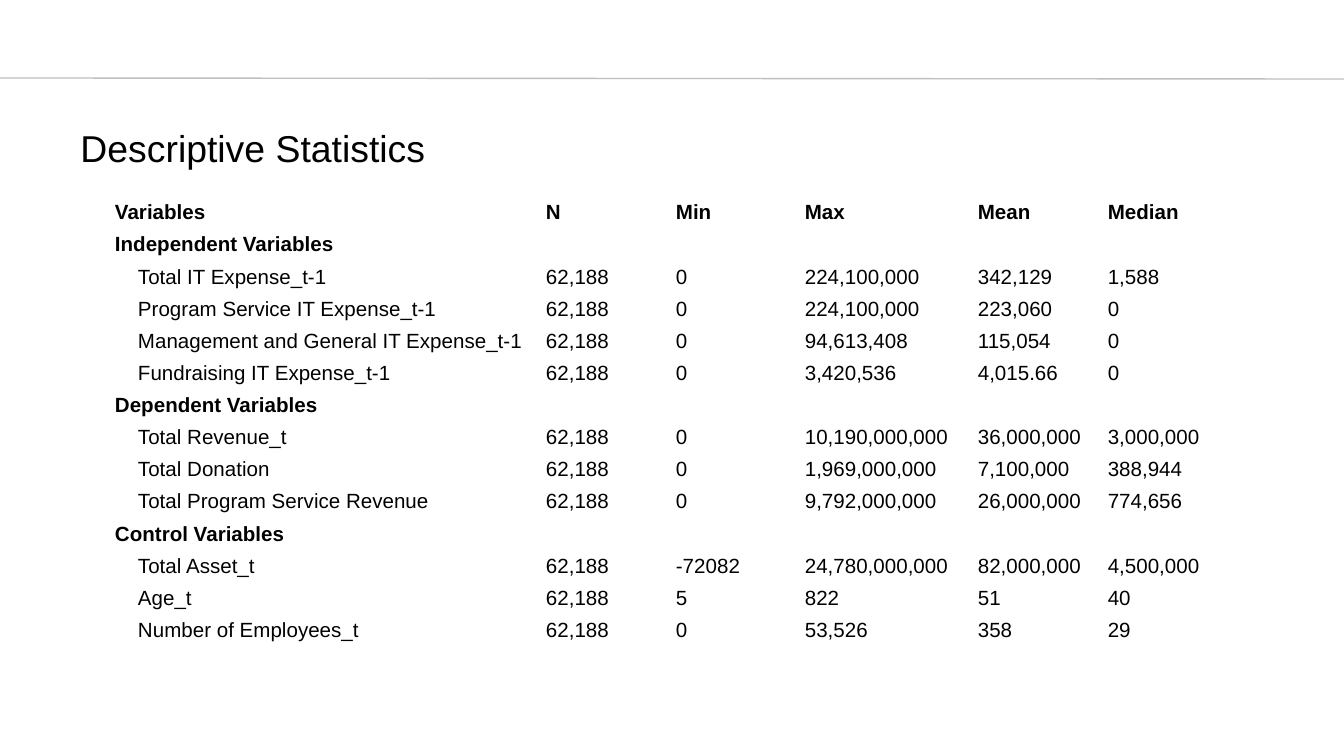
"""Build the descriptive statistics slide."""
import dataclasses

import lxml.etree
import pptx
import pptx.dml.color
import pptx.enum.shapes
import pptx.enum.text
import pptx.oxml.ns
import pptx.util

SCALE = 914400 / 134.4
FONT = "Arial"
BLACK = "000000"
COLS = (431, 130, 129, 173, 130, 129)


@dataclasses.dataclass(frozen=True)
class Row:
    label: str
    vals: tuple[str, ...] = ("",) * 5
    head: bool = False


def case(label: str, low: str, high: str, mean: str, mid: str) -> Row:
    return Row(label, ("62,188", low, high, mean, mid))


ROWS = (
    Row("Variables", ("N", "Min", "Max", "Mean", "Median"), True),
    Row("Independent Variables", head=True),
    case("Total IT Expense_t-1", "0", "224,100,000", "342,129", "1,588"),
    case("Program Service IT Expense_t-1", "0", "224,100,000", "223,060", "0"),
    case("Management and General IT Expense_t-1", "0", "94,613,408", "115,054", "0"),
    case("Fundraising IT Expense_t-1", "0", "3,420,536", "4,015.66", "0"),
    Row("Dependent Variables", head=True),
    case("Total Revenue_t", "0", "10,190,000,000", "36,000,000", "3,000,000"),
    case("Total Donation", "0", "1,969,000,000", "7,100,000", "388,944"),
    case("Total Program Service Revenue", "0", "9,792,000,000", "26,000,000", "774,656"),
    Row("Control Variables", head=True),
    case("Total Asset_t", "-72082", "24,780,000,000", "82,000,000", "4,500,000"),
    case("Age_t", "5", "822", "51", "40"),
    case("Number of Employees_t", "0", "53,526", "358", "29"),
)


def px(num: float) -> pptx.util.Emu:
    return pptx.util.Emu(round(num * SCALE))


def color(code: str) -> pptx.dml.color.RGBColor:
    return pptx.dml.color.RGBColor.from_string(code)


def write(frame, text: str, *, size: int, bold: bool = False, space: float = 1.0) -> None:
    para = frame.paragraphs[0]
    para.alignment = pptx.enum.text.PP_ALIGN.LEFT
    para.line_spacing = space
    if not text:
        tag = pptx.oxml.ns.qn("a:endParaRPr")
        lxml.etree.SubElement(para._p, tag, sz=str(size * 100))
        return
    run = para.add_run()
    run.text = text
    run.font.name = FONT
    run.font.size = pptx.util.Pt(size)
    run.font.bold = bold
    run.font.color.rgb = color(BLACK)


def rule(slide) -> None:
    line = slide.shapes.add_connector(
        pptx.enum.shapes.MSO_CONNECTOR.STRAIGHT, px(0), px(78), px(1344), px(79))
    line.line.color.rgb = color("BFBFBF")
    line.line.width = pptx.util.Pt(0.75)
    props = line._element.spPr
    lxml.etree.SubElement(props, pptx.oxml.ns.qn("a:effectLst"))


def title(slide, text: str) -> None:
    shape = slide.shapes.title
    shape.left, shape.top, shape.width, shape.height = map(px, (67, 103, 1210, 89))
    shape.text_frame.vertical_anchor = pptx.enum.text.MSO_ANCHOR.MIDDLE
    write(shape.text_frame, text, size=20)


def fill(cell, text: str, bold: bool, inset: int) -> None:
    cell.fill.background()
    cell.vertical_anchor = pptx.enum.text.MSO_ANCHOR.BOTTOM
    cell.margin_left, cell.margin_right = px(inset), px(4)
    cell.margin_top = cell.margin_bottom = px(2)
    write(cell.text_frame, text, size=11, bold=bold, space=1.15)


def table(slide, rows: tuple[Row, ...]) -> None:
    grid = slide.shapes.add_table(
        len(rows), len(COLS), px(111), px(194), px(sum(COLS)), px(450)).table
    grid.first_row = grid.horz_banding = False
    for col, width in zip(grid.columns, COLS):
        col.width = px(width)
    for line, row in zip(grid.rows, rows):
        for num, text in enumerate((row.label, *row.vals)):
            inset = 27 if num == 0 and not row.head else 4
            fill(line.cells[num], text, row.head, inset)


def main() -> None:
    deck = pptx.Presentation()
    deck.slide_width, deck.slide_height = px(1344), px(756)
    slide = deck.slides.add_slide(deck.slide_layouts[5])
    rule(slide)
    title(slide, "Descriptive Statistics")
    table(slide, ROWS)
    deck.save("out.pptx")


if __name__ == "__main__":
    main()
